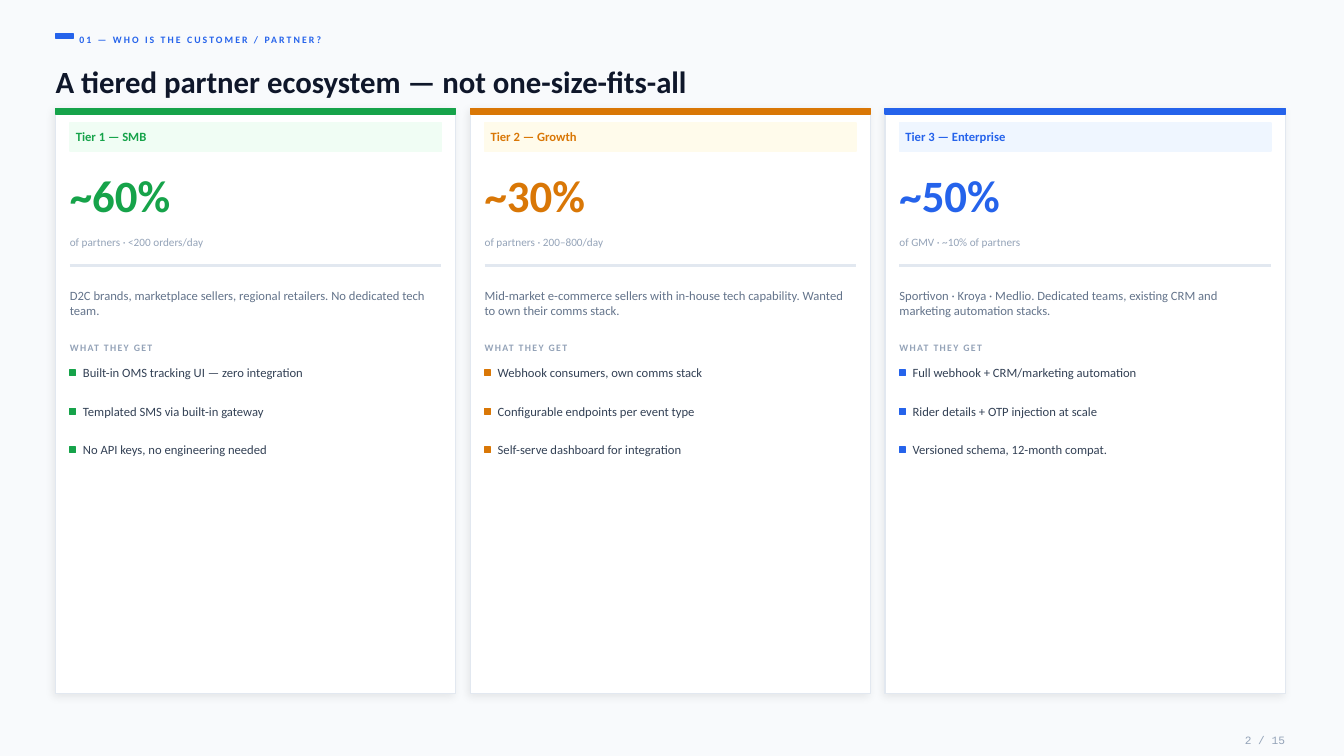
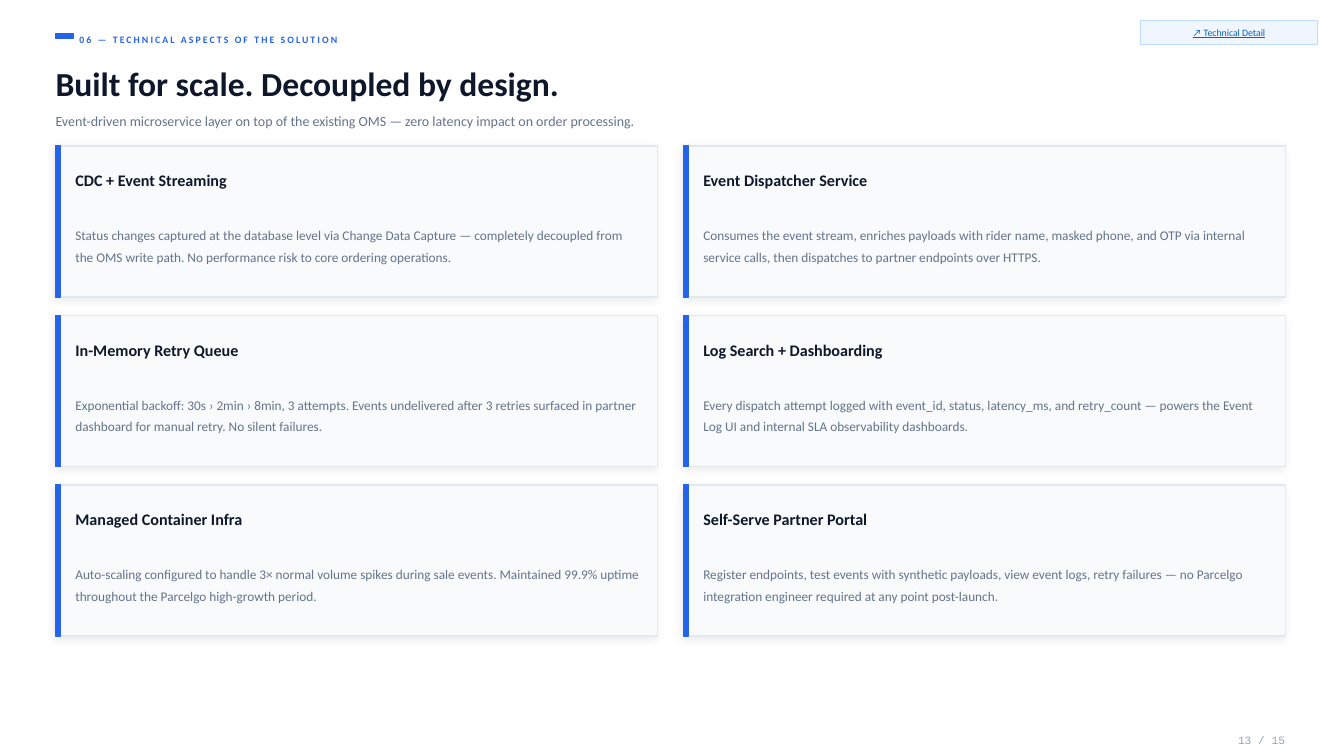
from dataclasses import dataclass

from lxml.etree import SubElement
from pptx import Presentation
from pptx.dml.color import RGBColor
from pptx.enum.shapes import MSO_CONNECTOR as Connector, MSO_SHAPE as Shape
from pptx.enum.text import MSO_ANCHOR as Anchor, PP_ALIGN as Align
from pptx.oxml.ns import qn
from pptx.util import Cm, Pt


@dataclass(frozen=True)
class Theme:
    font: str = "Calibri"
    mono: str = "Courier New"
    white: str = "FFFFFF"
    mist: str = "F8FAFC"
    border: str = "E2E8F0"
    ink: str = "0F172A"
    slate: str = "334155"
    body: str = "64748B"
    muted: str = "94A3B8"
    blue: str = "2563EB"
    blue_tint: str = "EFF6FF"
    blue_edge: str = "BFDBFE"
    link: str = "0563C1"
    green: str = "16A34A"
    green_tint: str = "F0FDF4"
    amber: str = "D97706"
    amber_tint: str = "FFFBEB"
    label_size: float = 7
    small_size: float = 8
    text_size: float = 9
    detail_size: float = 9.5
    subtitle_size: float = 10
    heading_size: float = 11.5
    figure_size: float = 32


THEME = Theme()
PAGE_W, PAGE_H = 33.87, 19.05
MARGIN = 1.4
CONTENT_W = 30.99
PAGE_COUNT = 15
BAND = 0.13


def write(shape, text, size=THEME.text_size, color=THEME.ink, font=THEME.font,
          bold=False, underline=False, align=Align.LEFT, tracking=0, leading=None):
    """Put one formatted paragraph in the shape; tracking is in points."""
    frame = shape.text_frame
    frame.word_wrap = True
    frame.vertical_anchor = Anchor.MIDDLE
    paragraph = frame.paragraphs[0]
    paragraph.alignment = align
    if leading:
        paragraph.line_spacing = leading
    run = paragraph.add_run()
    run.text = text
    run.font.name = font
    run.font.size = Pt(size)
    run.font.bold = bold
    run.font.underline = underline
    run.font.color.rgb = RGBColor.from_string(color)
    if tracking:
        for properties in shape.element.iter(qn("a:rPr")):
            properties.set("spc", str(round(tracking * 100)))


def columns(count, gap):
    """Return the left edges and the width of equal columns."""
    width = (CONTENT_W - gap * (count - 1)) / count
    return [MARGIN + i * (width + gap) for i in range(count)], width


class Deck:
    def __init__(self, theme):
        self.theme = theme
        self.presentation = Presentation()
        self.presentation.slide_width = Cm(PAGE_W)
        self.presentation.slide_height = Cm(PAGE_H)
        self.slide = None

    def start(self, number, background, kicker, title, title_size, title_h):
        """Open a slide with its marker, kicker, title and page number."""
        theme = self.theme
        blank = self.presentation.slide_layouts[6]
        self.slide = self.presentation.slides.add_slide(blank)
        fill = self.slide.background.fill
        fill.solid()
        fill.fore_color.rgb = RGBColor.from_string(background)
        self.rect(MARGIN, 0.86, 0.46, 0.1, theme.blue)
        self.text(2, 0.76, 30.39, 0.46, kicker, size=theme.label_size,
                  color=theme.blue, bold=True, tracking=1.5)
        self.text(MARGIN, 1.47, CONTENT_W, title_h, title, size=title_size, bold=True)
        self.text(30.86, 18.42, 1.53, 0.46, f"{number} / {PAGE_COUNT}",
                  size=theme.small_size, color=theme.muted, font=theme.mono,
                  align=Align.RIGHT)

    def rect(self, x, y, w, h, fill, edge=None, edge_width=1):
        box = self.slide.shapes.add_shape(Shape.RECTANGLE, Cm(x), Cm(y), Cm(w), Cm(h))
        box.fill.solid()
        box.fill.fore_color.rgb = RGBColor.from_string(fill)
        box.line.color.rgb = RGBColor.from_string(edge or fill)
        box.line.width = Pt(edge_width)
        box.shadow.inherit = False
        return box

    def panel(self, x, y, w, h, fill):
        """Draw a bordered rectangle with a soft shadow."""
        box = self.rect(x, y, w, h, fill, self.theme.border)
        effects = box.element.spPr.find(qn("a:effectLst"))
        shadow = SubElement(effects, qn("a:outerShdw"), blurRad=str(Pt(6)),
                            dist=str(Pt(2)), dir="8100000", algn="bl", rotWithShape="0")
        color = SubElement(shadow, qn("a:srgbClr"), val="000000")
        SubElement(color, qn("a:alpha"), val="8000")

    def divider(self, x, y, w):
        rule = self.slide.shapes.add_connector(
            Connector.STRAIGHT, Cm(x), Cm(y), Cm(x + w), Cm(y))
        rule.line.color.rgb = RGBColor.from_string(self.theme.border)
        rule.line.width = Pt(2)
        SubElement(rule.element.spPr, qn("a:effectLst"))

    def text(self, x, y, w, h, content, **style):
        box = self.slide.shapes.add_textbox(Cm(x), Cm(y), Cm(w), Cm(h))
        frame = box.text_frame
        frame.margin_left = frame.margin_right = 0
        frame.margin_top = frame.margin_bottom = 0
        write(box, content, **style)

    def tier_card(self, x, w, tier):
        theme, color = self.theme, tier["color"]
        top, pad = 2.74, 0.36
        left, inner = x + pad, w - 2 * pad
        self.panel(x, top, w, 14.73, theme.white)
        self.rect(x, top, w, BAND, color)
        self.rect(left, top + pad, inner, 0.71, tier["tint"])
        self.text(left + 0.15, 3.15, inner - 0.2, 0.56, tier["name"],
                  color=color, bold=True)
        self.text(left, 4.14, inner, 1.52, tier["share"], size=theme.figure_size,
                  color=color, bold=True)
        self.text(left, 5.74, inner, 0.71, tier["basis"], size=theme.small_size,
                  color=theme.muted)
        self.divider(left, 6.69, inner)
        self.text(left, 6.93, inner, 1.4, tier["profile"], color=theme.body)
        self.text(left, 8.53, inner, 0.46, "WHAT THEY GET", size=theme.label_size,
                  color=theme.muted, bold=True, tracking=1)
        for i, benefit in enumerate(tier["benefits"]):
            y = 8.99 + i * 0.97
            self.rect(left, y + 0.33, 0.15, 0.15, color)
            self.text(left + 0.33, y, inner - 0.33, 0.81, benefit, color=theme.slate)

    def component_card(self, x, y, w, h, heading, detail):
        theme = self.theme
        self.panel(x, y, w, h, theme.mist)
        self.rect(x, y, BAND, h, theme.blue)
        self.text(x + 0.5, y + 0.51, 14.3, 0.71, heading, size=theme.heading_size,
                  bold=True)
        self.text(x + 0.5, y + 1.37, 14.3, 2.18, detail, size=theme.detail_size,
                  color=theme.body, leading=1.35)

    def button(self, x, y, w, h, label):
        theme = self.theme
        box = self.rect(x, y, w, h, theme.blue_tint, theme.blue_edge, 0.75)
        write(box, label, size=theme.label_size, color=theme.link, underline=True,
              align=Align.CENTER)


TIERS = [
    dict(name="Tier 1 — SMB", color=THEME.green, tint=THEME.green_tint,
         share="~60%", basis="of partners · <200 orders/day",
         profile="D2C brands, marketplace sellers, regional retailers. "
                 "No dedicated tech team.",
         benefits=["Built-in OMS tracking UI — zero integration",
                   "Templated SMS via built-in gateway",
                   "No API keys, no engineering needed"]),
    dict(name="Tier 2 — Growth", color=THEME.amber, tint=THEME.amber_tint,
         share="~30%", basis="of partners · 200–800/day",
         profile="Mid-market e-commerce sellers with in-house tech capability. "
                 "Wanted to own their comms stack.",
         benefits=["Webhook consumers, own comms stack",
                   "Configurable endpoints per event type",
                   "Self-serve dashboard for integration"]),
    dict(name="Tier 3 — Enterprise", color=THEME.blue, tint=THEME.blue_tint,
         share="~50%", basis="of GMV · ~10% of partners",
         profile="Sportivon · Kroya · Medlio. Dedicated teams, existing CRM and "
                 "marketing automation stacks.",
         benefits=["Full webhook + CRM/marketing automation",
                   "Rider details + OTP injection at scale",
                   "Versioned schema, 12-month compat."]),
]

COMPONENTS = [
    ("CDC + Event Streaming",
     "Status changes captured at the database level via Change Data Capture — "
     "completely decoupled from the OMS write path. No performance risk to core "
     "ordering operations."),
    ("Event Dispatcher Service",
     "Consumes the event stream, enriches payloads with rider name, masked phone, "
     "and OTP via internal service calls, then dispatches to partner endpoints "
     "over HTTPS."),
    ("In-Memory Retry Queue",
     "Exponential backoff: 30s › 2min › 8min, 3 attempts. Events undelivered after "
     "3 retries surfaced in partner dashboard for manual retry. No silent failures."),
    ("Log Search + Dashboarding",
     "Every dispatch attempt logged with event_id, status, latency_ms, and "
     "retry_count — powers the Event Log UI and internal SLA observability "
     "dashboards."),
    ("Managed Container Infra",
     "Auto-scaling configured to handle 3× normal volume spikes during sale events. "
     "Maintained 99.9% uptime throughout the Parcelgo high-growth period."),
    ("Self-Serve Partner Portal",
     "Register endpoints, test events with synthetic payloads, view event logs, "
     "retry failures — no Parcelgo integration engineer required at any point "
     "post-launch."),
]


def partner_tiers(deck):
    deck.start(2, THEME.mist, "01 — WHO IS THE CUSTOMER / PARTNER?",
               "A tiered partner ecosystem — not one-size-fits-all", 22, 1.17)
    lefts, width = columns(len(TIERS), 0.37)
    for left, tier in zip(lefts, TIERS):
        deck.tier_card(left, width, tier)


def technical_aspects(deck):
    deck.start(13, THEME.white, "06 — TECHNICAL ASPECTS OF THE SOLUTION",
               "Built for scale. Decoupled by design.", 24, 1.27)
    deck.text(MARGIN, 2.74, CONTENT_W, 0.61,
              "Event-driven microservice layer on top of the existing OMS — "
              "zero latency impact on order processing.",
              size=THEME.subtitle_size, color=THEME.body)
    lefts, width = columns(2, 0.66)
    height, gap = 3.81, 0.46
    for i, (heading, detail) in enumerate(COMPONENTS):
        row, column = divmod(i, 2)
        deck.component_card(lefts[column], 3.68 + row * (height + gap),
                            width, height, heading, detail)
    deck.button(28.75, 0.51, 4.45, 0.61, "↗ Technical Detail")


def main():
    deck = Deck(THEME)
    partner_tiers(deck)
    technical_aspects(deck)
    deck.presentation.save("out.pptx")


if __name__ == "__main__":
    main()
